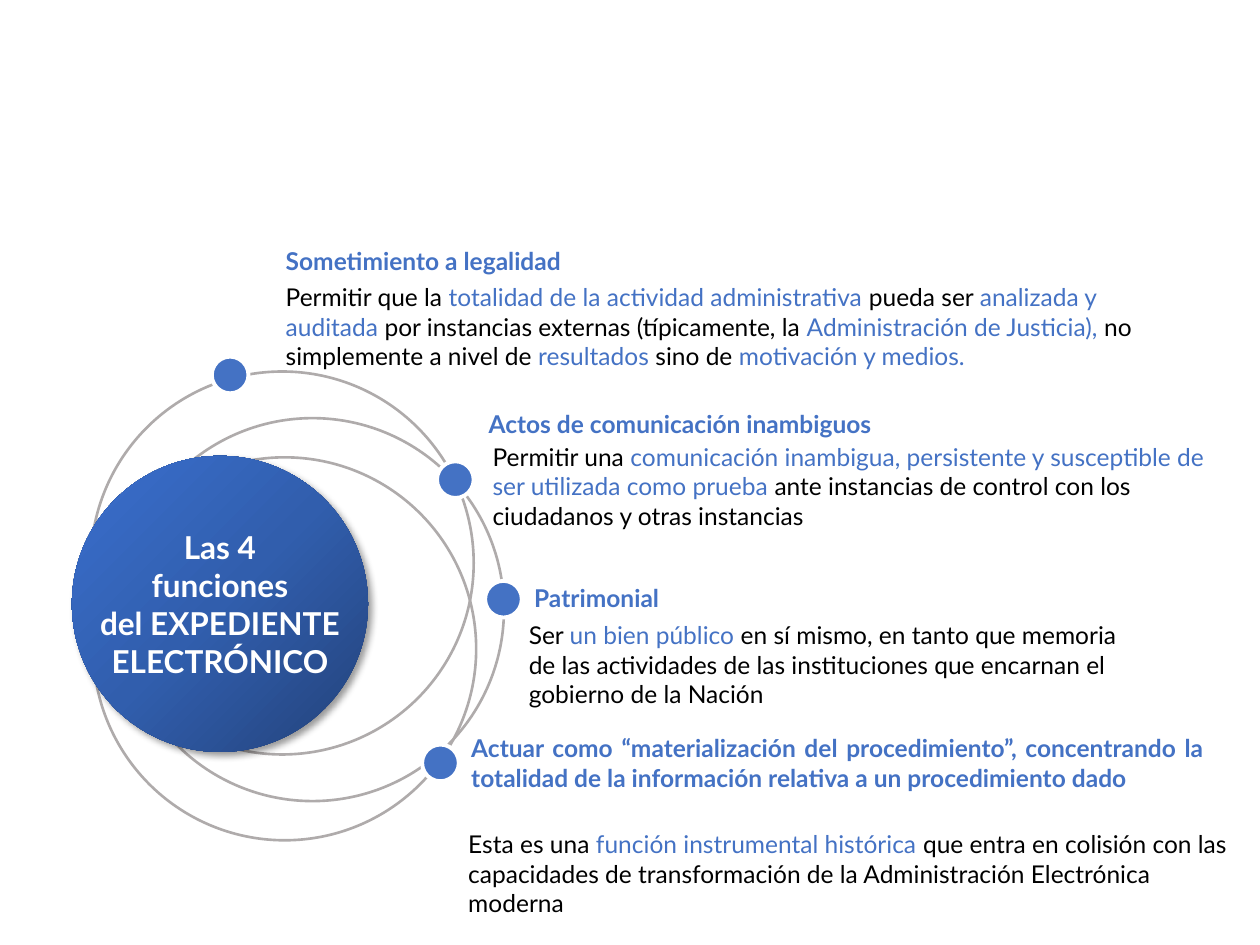
import copy

import pptx
import pptx.dml.color
import pptx.enum.shapes
import pptx.enum.text
import pptx.oxml
import pptx.oxml.ns
import pptx.util

Cm, Pt = pptx.util.Cm, pptx.util.Pt
ALIGN = pptx.enum.text.PP_ALIGN
BLUE, BLACK, WHITE, GREY = "4472C4", "000000", "FFFFFF", "AFABAB"
RING, CORE, DOT = 7.72, 5.97, 0.74

ITEMS = [
    dict(box=(5.51, 4.83, 13.59, 0.86), dot=(-1.24, 2.36), body=(0, 0.74, 17.88),
         head="Sometimiento a legalidad",
         text="Permitir que la |totalidad de la actividad administrativa |pueda ser "
              "|analizada y auditada |por instancias externas (típicamente, la "
              "|Administración de Justicia), |no simplemente a nivel de "
              "|resultados |sino de |motivación y medios."),
    dict(box=(9.6, 8.13, 10.9, 0.86), dot=(-0.79, 1.17), body=(0.08, 0.65, 15.14),
         head="Actos de comunicación inambiguos",
         text="Permitir una |comunicación inambigua, persistente y susceptible de ser "
              "utilizada como prueba |ante instancias de control con los ciudadanos "
              "y otras instancias"),
    dict(box=(10.52, 11.63, 11.89, 0.86), dot=(-0.74, 0.08), body=(-0.11, 0.75, 12.9),
         head="Patrimonial",
         text="Ser |un bien público |en sí mismo, en tanto que memoria de las "
              "actividades de las instituciones que encarnan el gobierno de la Nación"),
    dict(box=(9.25, 14.66, 15.27, 2.06), dot=(-0.74, 0.35), body=(-0.06, 1.93, 15.82),
         head="Actuar como “materialización del procedimiento”, concentrando la "
              "totalidad de la información relativa a un procedimiento dado",
         text="Esta es una |función instrumental histórica |que entra en colisión con "
              "las capacidades de transformación de la Administración Electrónica moderna"),
]


def rgb(code):
    """Turn a hex string into a colour."""
    return pptx.dml.color.RGBColor.from_string(code)


def write(frame, text, size=14, bold=False, colors=(BLACK, BLUE), align=ALIGN.LEFT):
    """Fill a frame, switching colour at each bar and paragraph at each newline."""
    for i, line in enumerate(text.split("\n")):
        para = frame.add_paragraph() if i else frame.paragraphs[0]
        para.alignment = align
        for j, part in enumerate(line.split("|")):
            run = para.add_run()
            run.text = part
            run.font.name = "Lato"
            run.font.size = Pt(size)
            run.font.bold = bold
            run.font.color.rgb = rgb(colors[j % len(colors)])


def label(slide, box, text, **look):
    """Add a wrapping text box."""
    frame = slide.shapes.add_textbox(*map(Cm, box)).text_frame
    frame.word_wrap = True
    frame.auto_size = pptx.enum.text.MSO_AUTO_SIZE.SHAPE_TO_FIT_TEXT
    write(frame, text, **look)


def disc(slide, x, y, size, fill=None, line=None, width=1.5):
    """Add a circle with an optional fill and line."""
    shape = slide.shapes.add_shape(
        pptx.enum.shapes.MSO_SHAPE.OVAL, Cm(x), Cm(y), Cm(size), Cm(size))
    shape.shadow.inherit = False
    if fill:
        shape.fill.solid()
        shape.fill.fore_color.rgb = rgb(fill)
    else:
        shape.fill.background()
    if line:
        shape.line.color.rgb = rgb(line)
        shape.line.width = Pt(width)
    else:
        shape.line.fill.background()
    return shape


def shade(shape):
    """Give a shape a three-stop gradient and a soft shadow."""
    shape.fill.gradient()
    shape.fill.gradient_angle = 135
    first = shape.element.spPr.xpath("./a:gradFill/a:gsLst/a:gs")[0]
    first.addnext(copy.deepcopy(first))
    tones = ((0, "23427A"), (0.5, "315EAD"), (1, "3A6FCE"))
    for stop, (place, tone) in zip(shape.fill.gradient_stops, tones):
        stop.position = place
        stop.color.rgb = rgb(tone)
    shadow = pptx.oxml.parse_xml(
        f'<a:outerShdw {pptx.oxml.ns.nsdecls("a")} blurRad="{Pt(4)}" dist="{Pt(3)}" '
        'dir="2700000" algn="tl" rotWithShape="0"><a:srgbClr val="000000">'
        '<a:alpha val="40000"/></a:srgbClr></a:outerShdw>')
    shape.element.spPr.xpath("./a:effectLst")[0].append(shadow)


def hub(slide, x, y):
    """Draw the rings and the titled core."""
    for dx, dy in ((0.05, 1.73), (0.61, 0.94), (0, 0)):
        disc(slide, x + dx, y + dy, RING, line=GREY)
    core = disc(slide, x - 0.38, y + 1.7, CORE, fill=BLUE)
    shade(core)
    frame = core.text_frame
    frame.word_wrap = False
    frame.vertical_anchor = pptx.enum.text.MSO_ANCHOR.MIDDLE
    frame.margin_left = frame.margin_right = Cm(0.1)
    write(frame, "Las 4\nfunciones\ndel EXPEDIENTE\nELECTRÓNICO",
          size=18, bold=True, colors=(WHITE,), align=ALIGN.CENTER)


def item(slide, box, dot, body, head, text):
    """Draw one function: its dot, heading and description."""
    x, y = box[:2]
    disc(slide, x + dot[0], y + dot[1], DOT, fill=BLUE, line=WHITE, width=2.25)
    label(slide, box, head, bold=True, colors=(BLUE,), align=ALIGN.JUSTIFY)
    label(slide, (x + body[0], y + body[1], body[2], 2.06), text)


def main():
    """Build and save the slide."""
    deck = pptx.Presentation()
    deck.slide_width, deck.slide_height = Cm(25.4), Cm(19.05)
    slide = deck.slides.add_slide(deck.slide_layouts[6])
    hub(slide, 1.83, 7.49)
    for entry in ITEMS:
        item(slide, **entry)
    deck.save("out.pptx")


if __name__ == "__main__":
    main()
